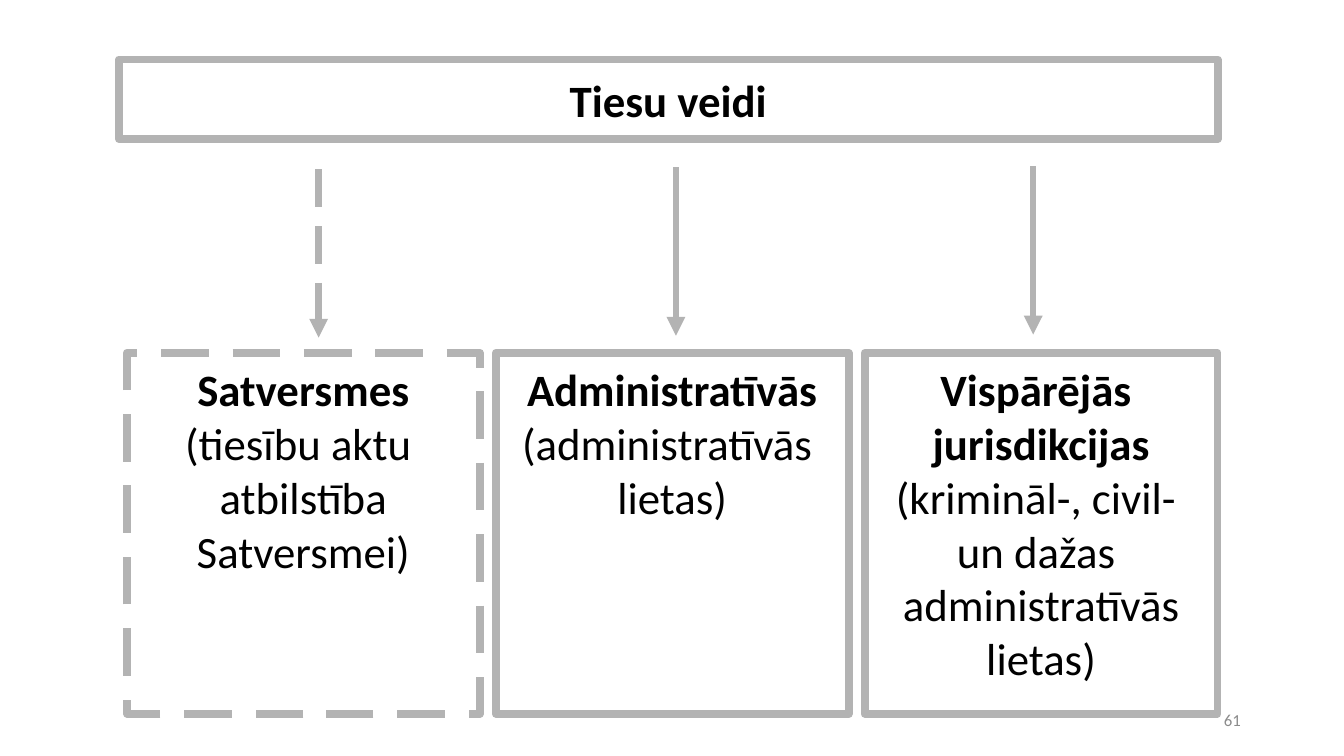
from dataclasses import dataclass

from lxml.etree import SubElement
from pptx import Presentation
from pptx.dml.color import RGBColor
from pptx.enum.shapes import MSO_CONNECTOR as Connector
from pptx.enum.shapes import MSO_SHAPE as Shape
from pptx.enum.text import MSO_ANCHOR as Anchor
from pptx.enum.text import PP_ALIGN as Align
from pptx.oxml.ns import qn
from pptx.slide import Slide
from pptx.util import Pt

GREY = RGBColor(0xB3, 0xB3, 0xB3)
BLACK = RGBColor(0, 0, 0)
NUMBER_GREY = RGBColor(0x8B, 0x8B, 0x8B)
FONT = "Calibri"

COURT_LEFT, COURT_TOP, COURT_PITCH = 90.7, 252, 263.5
COURT_WIDTH, COURT_HEIGHT = 252, 257.8
ARROW_LEFT, ARROW_PITCH, ARROW_LENGTH = 227.6, 255.2, 120.2


@dataclass
class Court:
    name: list[str]
    cases: list[str]
    arrow_top: float
    dashed: bool = False


COURTS = [
    Court(["Satversmes"], ["(tiesību aktu ", "atbilstība", "Satversmei)"], 121, dashed=True),
    Court(["Administratīvās"], ["(administratīvās ", "lietas)"], 119.6),
    Court(
        ["Vispārējās ", "jurisdikcijas"],
        ["(krimināl-, civil- ", "un dažas ", "administratīvās", "lietas)"],
        118.8,
    ),
]


def style_line(item, width: float, dashed: bool = False, arrow: bool = False) -> None:
    item.line.color.rgb = GREY
    item.line.width = Pt(width)
    ln = item.line._get_or_add_ln()
    if dashed:
        SubElement(SubElement(ln, qn("a:custDash")), qn("a:ds"), d="600000", sp="300000")
    SubElement(ln, qn("a:round"))
    if arrow:
        SubElement(ln, qn("a:tailEnd"), type="triangle")


def add_box(slide: Slide, left: float, top: float, width: float, height: float,
            bold_lines: list[str], plain_lines: list[str],
            anchor: Anchor, dashed: bool = False) -> None:
    box = slide.shapes.add_shape(Shape.RECTANGLE, Pt(left), Pt(top), Pt(width), Pt(height))
    box.shadow.inherit = False
    box.fill.background()
    style_line(box, 5.67, dashed)
    frame = box.text_frame
    frame.word_wrap = False
    frame.vertical_anchor = anchor
    frame.margin_left = frame.margin_right = Pt(10)
    frame.margin_top = frame.margin_bottom = Pt(6.5)
    for i, text in enumerate(bold_lines + plain_lines):
        paragraph = frame.paragraphs[0] if i == 0 else frame.add_paragraph()
        paragraph.text = text
        paragraph.alignment = Align.CENTER
        font = paragraph.font
        font.name, font.size, font.bold = FONT, Pt(32), i < len(bold_lines)
        font.color.rgb = BLACK


def add_arrow(slide: Slide, x: float, top: float, dashed: bool) -> None:
    arrow = slide.shapes.add_connector(
        Connector.STRAIGHT, Pt(x), Pt(top), Pt(x), Pt(top + ARROW_LENGTH))
    style_line(arrow, 4.5, dashed, arrow=True)
    SubElement(arrow._element.spPr, qn("a:effectLst"))


def add_slide_number(slide: Slide) -> None:
    number = slide.shapes.add_textbox(Pt(678.2), Pt(500.4), Pt(215.3), Pt(28))
    frame = number.text_frame
    frame.word_wrap = True
    frame.vertical_anchor = Anchor.MIDDLE
    paragraph = frame.paragraphs[0]
    paragraph.text = "61"
    paragraph.alignment = Align.RIGHT
    paragraph.font.name, paragraph.font.size = FONT, Pt(12)
    paragraph.font.color.rgb = NUMBER_GREY


def main() -> None:
    presentation = Presentation()
    presentation.slide_width, presentation.slide_height = Pt(960), Pt(540)
    slide = presentation.slides.add_slide(presentation.slide_layouts[6])

    add_slide_number(slide)

    # Heading
    add_box(slide, 85, 42.5, 784.8, 56.9, ["Tiesu veidi"], [], Anchor.MIDDLE)

    # Kinds of court, each with its arrow
    for i, court in enumerate(COURTS):
        add_box(slide, COURT_LEFT + i * COURT_PITCH, COURT_TOP, COURT_WIDTH, COURT_HEIGHT,
                court.name, court.cases, Anchor.TOP, court.dashed)
        add_arrow(slide, ARROW_LEFT + i * ARROW_PITCH, court.arrow_top, court.dashed)

    presentation.save("out.pptx")


if __name__ == "__main__":
    main()
